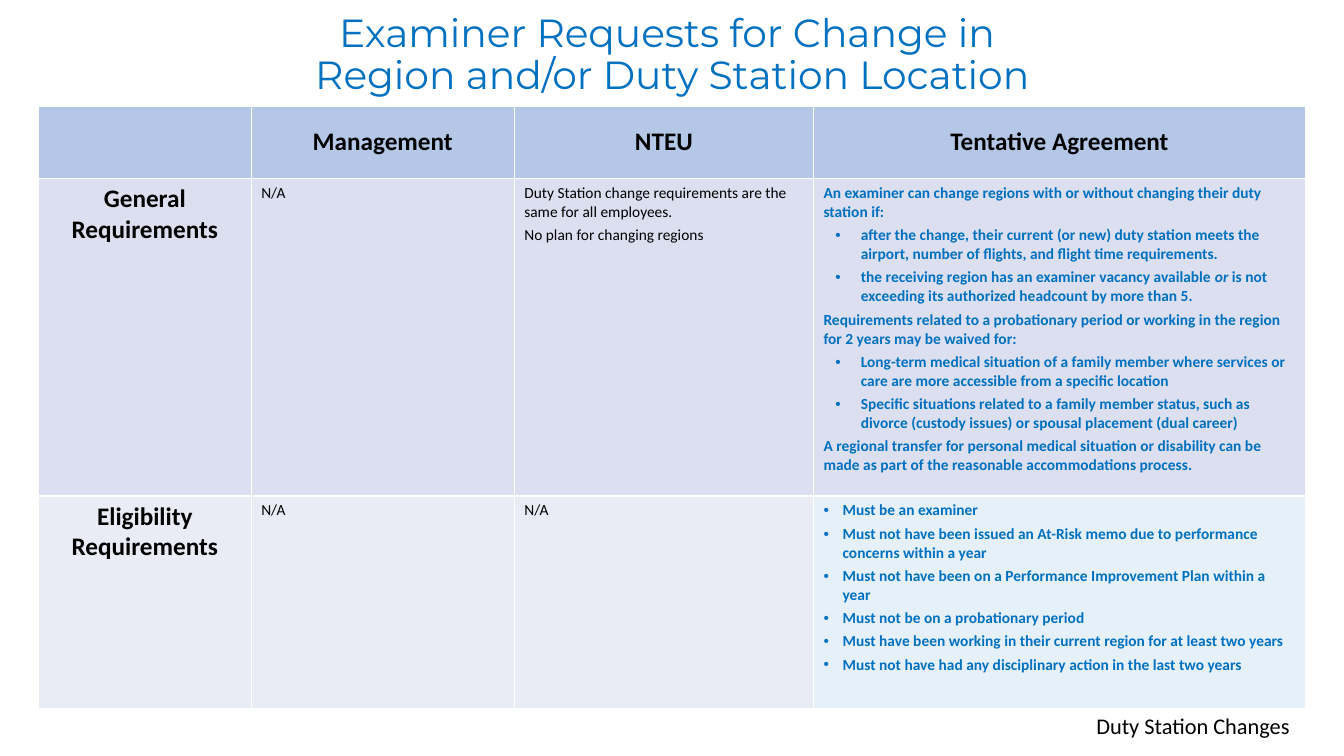
"""Build the slide comparing positions on examiner region and duty station changes."""
from lxml import etree
from pptx import Presentation
from pptx.dml.color import RGBColor
from pptx.enum.text import MSO_ANCHOR, MSO_AUTO_SIZE, PP_ALIGN
from pptx.oxml.ns import qn
from pptx.util import Cm, Pt

BLUE = RGBColor(0x00, 0x70, 0xC0)
BLACK = RGBColor(0x00, 0x00, 0x00)
HEADER_FILL = RGBColor(0xB4, 0xC7, 0xE7)
GENERAL_FILL = RGBColor(0xCF, 0xD5, 0xEA)
ELIGIBILITY_FILL = RGBColor(0xE9, 0xEB, 0xF5)
AGREED_FILL = RGBColor(0xDE, 0xEB, 0xF7)
CENTER = PP_ALIGN.CENTER
MIDDLE = MSO_ANCHOR.MIDDLE
NO_AUTOFIT = MSO_AUTO_SIZE.NONE

COLUMN_WIDTHS = [5.36, 6.63, 7.54, 12.4]
ROW_HEIGHTS = [1.83, 8, 5.36]
HEADINGS = ["", "Management", "NTEU", "Tentative Agreement"]
GENERAL_TERMS = [
    "An examiner can change regions with or without changing their duty station if:",
    "• after the change, their current (or new) duty station meets the airport, "
    "number of flights, and flight time requirements.",
    "• the receiving region has an examiner vacancy available *or* is not exceeding "
    "its authorized headcount by more than 5.",
    "Requirements related to a probationary period or working in the region "
    "for 2 years may be waived for:",
    "• Long-term medical situation of a family member where services or care are "
    "more accessible from a specific location",
    "• Specific situations related to a family member status, such as divorce "
    "(custody issues) or spousal placement (dual career)",
    "A regional transfer for personal medical situation or disability can be made "
    "as part of the reasonable accommodations process.",
]
ELIGIBILITY_TERMS = [
    "• Must be an examiner",
    "• Must not have been issued an At-Risk memo due to performance concerns within a year",
    "• Must not have been on a Performance Improvement Plan within a year",
    "• Must not be on a probationary period",
    "• Must have been working in their current region for at least two years",
    "• Must not have had any disciplinary action in the last two years",
]
TOPICS = [
    ("General Requirements", ["N/A"],
     ["Duty Station change requirements are the same for all employees.",
      "No plan for changing regions"],
     GENERAL_TERMS, GENERAL_FILL, GENERAL_FILL, 74, (0.94, 0.64)),
    ("Eligibility Requirements", ["N/A"], ["N/A"],
     ELIGIBILITY_TERMS, ELIGIBILITY_FILL, AGREED_FILL, 100, (0.48, 0.48)),
]


def style_runs(paragraph, size, color, bold=False, font="Calibri"):
    for run in paragraph.runs:
        run.font.name = font
        run.font.size = Pt(size)
        run.font.color.rgb = color
        run.font.bold = bold


def fill_cell(cell, color, opacity=100):
    cell.fill.solid()
    cell.fill.fore_color.rgb = color
    if opacity < 100:
        tint = next(cell.fill._xPr.iter(qn("a:srgbClr")))
        etree.SubElement(tint, qn("a:alpha")).set("val", str(opacity * 1000))


presentation = Presentation()
presentation.slide_width = Cm(33.87)
presentation.slide_height = Cm(19.05)
slide = presentation.slides.add_slide(presentation.slide_layouts[5])

title = slide.shapes.title
title.left, title.top, title.width, title.height = Cm(1.52), Cm(0.13), Cm(30.84), Cm(2.54)
title.text_frame.text = "Examiner Requests for Change in \vRegion and/or Duty Station Location"
title.text_frame.auto_size = NO_AUTOFIT
title.text_frame.vertical_anchor = MIDDLE
heading = title.text_frame.paragraphs[0]
heading.alignment = CENTER
heading.line_spacing = 0.9
style_runs(heading, 28, BLUE, font="Montserrat")

positions = slide.shapes.add_table(
    len(ROW_HEIGHTS), len(COLUMN_WIDTHS), Cm(0.97), Cm(2.67),
    Cm(sum(COLUMN_WIDTHS)), Cm(sum(ROW_HEIGHTS))).table
for column, width in zip(positions.columns, COLUMN_WIDTHS):
    column.width = Cm(width)
for row, height in zip(positions.rows, ROW_HEIGHTS):
    row.height = Cm(height)

for cell, label in zip(positions.rows[0].cells, HEADINGS):
    fill_cell(cell, HEADER_FILL)
    cell.vertical_anchor = MIDDLE
    cell.text_frame.text = label
    cell.text_frame.paragraphs[0].alignment = CENTER
    style_runs(cell.text_frame.paragraphs[0], 18, BLACK, bold=True)

for row_number, topic in enumerate(TOPICS, start=1):
    name, management, union, agreement, fill, agreed_fill, opacity, indents = topic
    topic_cell, *position_cells = positions.rows[row_number].cells
    agreed_cell = position_cells[-1]
    fill_cell(topic_cell, fill, opacity)
    topic_cell.text_frame.text = name
    topic_cell.text_frame.paragraphs[0].alignment = CENTER
    style_runs(topic_cell.text_frame.paragraphs[0], 18, BLACK, bold=True)

    for cell, terms in zip(position_cells, [management, union, agreement]):
        agreed = cell is agreed_cell
        fill_cell(cell, agreed_fill if agreed else fill, 74 if agreed else opacity)
        cell.text_frame.text = "\n".join(term.removeprefix("• ") for term in terms)
        for paragraph, term in zip(cell.text_frame.paragraphs, terms):
            paragraph.space_after = Pt(3)
            if term.startswith("•"):
                properties = paragraph._p.get_or_add_pPr()
                properties.set("marL", str(Cm(indents[0])))
                properties.set("indent", str(-Cm(indents[1])))
                etree.SubElement(properties, qn("a:buFont")).set("typeface", "Arial")
                etree.SubElement(properties, qn("a:buChar")).set("char", "•")
            if "*" in term:
                pieces = paragraph.text.split("*")
                paragraph.text = pieces[0]
                for position, piece in enumerate(pieces[1:], start=1):
                    run = paragraph.add_run()
                    run.text = piece
                    run.font.italic = position % 2 == 1
            style_runs(paragraph, 11, BLUE if agreed else BLACK, bold=agreed)

section = slide.shapes.add_textbox(Cm(27.38), Cm(17.83), Cm(5.51), Cm(0.94))
section.text_frame.word_wrap = True
section.text_frame.text = "Duty Station Changes"
style_runs(section.text_frame.paragraphs[0], 16, BLACK)

presentation.save("out.pptx")
